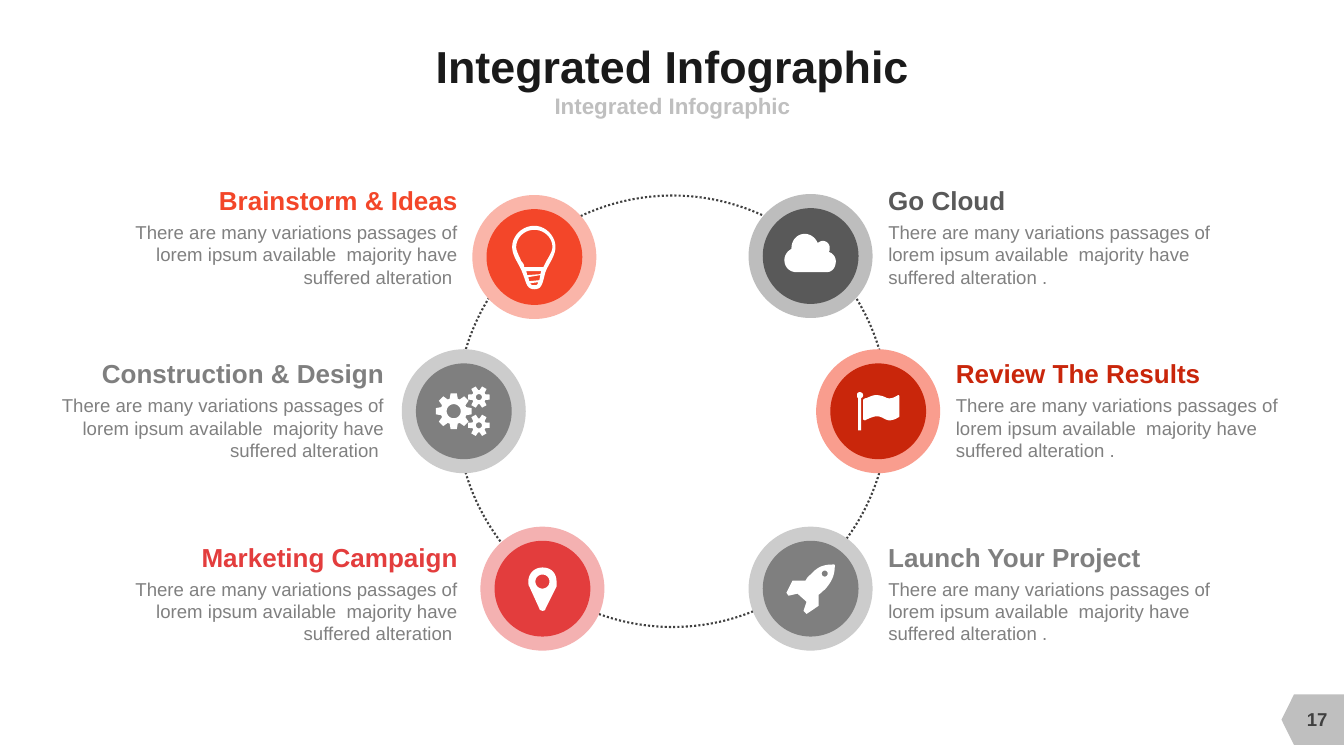
import math

import pptx
import pptx.dml.color
import pptx.enum.dml
import pptx.enum.shapes
import pptx.enum.text
import pptx.util

Inches = pptx.util.Inches
Pt = pptx.util.Pt
RGBColor = pptx.dml.color.RGBColor
Shape = pptx.enum.shapes.MSO_SHAPE
Align = pptx.enum.text.PP_ALIGN
Anchor = pptx.enum.text.MSO_ANCHOR

WHITE = RGBColor(0xFF, 0xFF, 0xFF)
BLACK = RGBColor(0x1A, 0x1A, 0x1A)
CHARCOAL = RGBColor(0x40, 0x40, 0x40)
DARK_GRAY = RGBColor(0x59, 0x59, 0x59)
GRAY = RGBColor(0x7F, 0x7F, 0x7F)
BODY_GRAY = RGBColor(0x80, 0x80, 0x80)
SILVER = RGBColor(0xBD, 0xBD, 0xBD)
TAG_GRAY = RGBColor(0xBF, 0xBF, 0xBF)
PALE_GRAY = RGBColor(0xCC, 0xCC, 0xCC)
ORANGE = RGBColor(0xF3, 0x46, 0x29)
PALE_ORANGE = RGBColor(0xFA, 0xB5, 0xA9)
RED = RGBColor(0xE3, 0x3D, 0x3D)
PALE_RED = RGBColor(0xF4, 0xB1, 0xB1)
DEEP_RED = RGBColor(0xC9, 0x26, 0x0B)
PALE_DEEP_RED = RGBColor(0xF9, 0x9D, 0x8E)

RING_SIZE, DISC_SIZE = 1.23, 0.95
BODY_WIDTH = 3.32
BODY_TEXT = ("There are many variations passages of lorem ipsum available  "
             "majority have suffered alteration ")

# heading, heading width, text edge, top, alignment, badge centre, ring colour, disc colour
TOPICS = [
    ("Construction & Design", 2.83, 3.81, 3.55, Align.RIGHT, (4.6, 4.08), PALE_GRAY, GRAY),
    ("Marketing Campaign", 2.57, 4.54, 5.37, Align.RIGHT, (5.38, 5.84), PALE_RED, RED),
    ("Go Cloud", 1.17, 8.81, 1.83, Align.LEFT, (8.04, 2.54), SILVER, DARK_GRAY),
    ("Review The Results", 2.45, 9.48, 3.55, Align.LEFT, (8.71, 4.08), PALE_DEEP_RED, DEEP_RED),
    ("Launch Your Project", 2.53, 8.81, 5.37, Align.LEFT, (8.04, 5.84), PALE_GRAY, GRAY),
    ("Brainstorm & Ideas", 2.4, 4.54, 1.83, Align.RIGHT, (5.3, 2.55), PALE_ORANGE, ORANGE),
]

# Outlines in inches: a pair is a straight step, six numbers are a Bézier curve.
BULB = [
    [(5.3, 2.24), (5.18, 2.24, 5.08, 2.34, 5.08, 2.45), (5.08, 2.54, 5.15, 2.62, 5.18, 2.7),
     (5.22, 2.8, 5.22, 2.87, 5.3, 2.87), (5.38, 2.87, 5.38, 2.81, 5.41, 2.7),
     (5.44, 2.62, 5.51, 2.54, 5.51, 2.45), (5.51, 2.34, 5.41, 2.24, 5.3, 2.24)],
    [(5.39, 2.65), (5.2, 2.65), (5.2, 2.63, 5.19, 2.61, 5.17, 2.59),
     (5.15, 2.54, 5.12, 2.49, 5.12, 2.45), (5.12, 2.36, 5.2, 2.28, 5.3, 2.28),
     (5.4, 2.28, 5.48, 2.36, 5.48, 2.45), (5.48, 2.49, 5.45, 2.54, 5.42, 2.59),
     (5.41, 2.61, 5.4, 2.63, 5.39, 2.65)],
    [(5.23, 2.73), (5.22, 2.69), (5.37, 2.69), (5.36, 2.72)],
    [(5.35, 2.78), (5.25, 2.79), (5.24, 2.75), (5.36, 2.73)],
    [(5.3, 2.83), (5.28, 2.83, 5.27, 2.83, 5.26, 2.81), (5.34, 2.8),
     (5.33, 2.83, 5.32, 2.83, 5.3, 2.83)],
]
MARKER = [(5.52, 5.82), (5.41, 6.04), (5.41, 6.05, 5.4, 6.06, 5.38, 6.06),
          (5.37, 6.06, 5.35, 6.05, 5.35, 6.04), (5.25, 5.82),
          (5.24, 5.81, 5.24, 5.78, 5.24, 5.77), (5.24, 5.69, 5.3, 5.63, 5.38, 5.63),
          (5.47, 5.63, 5.52, 5.69, 5.52, 5.77), (5.52, 5.78, 5.52, 5.81, 5.52, 5.82)]
ROCKET = [(8.18, 5.85), (8.16, 5.86, 8.15, 5.88, 8.12, 5.9), (8.12, 6.01), (8, 6.09),
          (7.97, 6.06), (8, 5.97), (7.91, 5.89), (7.82, 5.91), (7.8, 5.88), (7.86, 5.76),
          (7.99, 5.76), (8, 5.74, 8.02, 5.71, 8.04, 5.7), (8.11, 5.62, 8.17, 5.6, 8.27, 5.6),
          (8.28, 5.6, 8.28, 5.61, 8.28, 5.61), (8.28, 5.71, 8.25, 5.77, 8.18, 5.85)]
CLOUD = [(8.2, 2.7), (7.9, 2.7), (7.83, 2.7, 7.78, 2.65, 7.78, 2.58),
         (7.78, 2.53, 7.81, 2.49, 7.85, 2.47), (7.85, 2.46),
         (7.85, 2.38, 7.91, 2.32, 7.98, 2.32), (8.04, 2.32, 8.09, 2.36, 8.11, 2.41),
         (8.13, 2.4, 8.14, 2.39, 8.16, 2.39), (8.2, 2.39, 8.23, 2.42, 8.23, 2.46),
         (8.23, 2.47, 8.23, 2.49, 8.22, 2.5), (8.26, 2.51, 8.29, 2.55, 8.29, 2.59),
         (8.29, 2.66, 8.25, 2.7, 8.2, 2.7)]
FLAG = [
    [(8.54, 3.95), (8.54, 4.27), (8.51, 4.27), (8.51, 3.95),
     (8.5, 3.94, 8.5, 3.93, 8.5, 3.92), (8.5, 3.9, 8.51, 3.89, 8.53, 3.89),
     (8.54, 3.89, 8.56, 3.9, 8.56, 3.92), (8.56, 3.93, 8.56, 3.94, 8.54, 3.95)],
    [(8.92, 4.12), (8.92, 4.13, 8.92, 4.14, 8.91, 4.14), (8.88, 4.16, 8.85, 4.17, 8.82, 4.17),
     (8.78, 4.17, 8.75, 4.13, 8.7, 4.13), (8.66, 4.13, 8.62, 4.15, 8.58, 4.17),
     (8.57, 4.17, 8.56, 4.16, 8.56, 4.16), (8.56, 3.97), (8.56, 3.96, 8.58, 3.95, 8.59, 3.95),
     (8.62, 3.94, 8.65, 3.92, 8.69, 3.92), (8.73, 3.92, 8.76, 3.93, 8.8, 3.95),
     (8.86, 3.96, 8.9, 3.92, 8.91, 3.92), (8.92, 3.92, 8.92, 3.93, 8.92, 3.94)],
]


def polar(center, radius, angle):
    return center[0] + radius * math.cos(angle), center[1] + radius * math.sin(angle)


def circle(center, radius, steps=32):
    return [polar(center, radius, math.tau * step / steps) for step in range(steps)]


def gear(center, tip_radius, root_radius, hole_radius, teeth):
    """Return the toothed outline and the round hole of a gear."""
    pitch = math.tau / teeth
    profile = [(root_radius, -0.4), (tip_radius, -0.22), (tip_radius, 0.22), (root_radius, 0.4)]
    outline = [polar(center, radius, (tooth + offset) * pitch)
               for tooth in range(teeth) for radius, offset in profile]
    return [outline, circle(center, hole_radius)]


def flatten(outline, steps=10):
    """Turn straight and Bézier steps into a list of points in EMU."""
    points = [outline[0]]
    for step in outline[1:]:
        if len(step) == 2:
            points.append(step)
            continue
        controls = [points[-1], step[:2], step[2:4], step[4:]]
        for index in range(1, steps + 1):
            t = index / steps
            weights = [(1 - t) ** 3, 3 * t * (1 - t) ** 2, 3 * t * t * (1 - t), t ** 3]
            points.append(tuple(sum(w * control[axis] for w, control in zip(weights, controls))
                                for axis in (0, 1)))
    return [(Inches(x), Inches(y)) for x, y in points]


def paint(shape, color):
    shape.shadow.inherit = False
    shape.fill.solid()
    shape.fill.fore_color.rgb = color
    shape.line.fill.background()


def add_icon(slide, outlines):
    contours = [flatten(outline) for outline in outlines]
    builder = slide.shapes.build_freeform(*contours[0][0])
    for index, points in enumerate(contours):
        if index:
            builder.move_to(*points[0])
        builder.add_line_segments(points[1:], close=True)
    paint(builder.convert_to_shape(), WHITE)


def add_disc(slide, center, size, color):
    disc = slide.shapes.add_shape(Shape.OVAL, Inches(center[0] - size / 2),
                                  Inches(center[1] - size / 2), Inches(size), Inches(size))
    paint(disc, color)


def add_text(slide, box, text, size, color, align, bold=True, wrap=True,
             anchor=Anchor.TOP, line_spacing=None):
    frame = slide.shapes.add_textbox(*map(Inches, box)).text_frame
    frame.margin_left = frame.margin_right = frame.margin_top = frame.margin_bottom = 0
    frame.word_wrap = wrap
    frame.vertical_anchor = anchor
    paragraph = frame.paragraphs[0]
    paragraph.text = text
    paragraph.alignment = align
    paragraph.line_spacing = line_spacing
    font = paragraph.font
    font.name, font.size, font.bold = "Arial", Pt(size), bold
    font.color.rgb = color


def add_topic(slide, heading, heading_width, edge, top, align, center, ring_color, disc_color):
    add_disc(slide, center, RING_SIZE, ring_color)
    add_disc(slide, center, DISC_SIZE, disc_color)
    on_left = align == Align.RIGHT
    body = BODY_TEXT if on_left else BODY_TEXT + "."
    add_text(slide, (edge - BODY_WIDTH * on_left, top + 0.36, BODY_WIDTH, 0.67), body,
             13.3, BODY_GRAY, align, bold=False, line_spacing=Pt(16))
    add_text(slide, (edge - heading_width * on_left, top, heading_width, 0.31), heading,
             18.6, disc_color, align, wrap=False)


def add_page_number(slide):
    tag = slide.shapes.add_shape(Shape.FLOWCHART_OFFPAGE_CONNECTOR, Inches(12.77), Inches(6.83),
                                 Inches(0.5), Inches(0.62))
    tag.rotation = 90
    paint(tag, TAG_GRAY)
    add_text(slide, (12.73, 6.93, 0.67, 0.4), "17", 13.3, CHARCOAL, Align.CENTER,
             anchor=Anchor.MIDDLE)


def add_orbit(slide):
    orbit = slide.shapes.add_shape(Shape.OVAL, Inches(4.53), Inches(1.94),
                                   Inches(4.28), Inches(4.28))
    orbit.shadow.inherit = False
    orbit.fill.background()
    orbit.line.color.rgb = CHARCOAL
    orbit.line.width = Pt(1.5)
    orbit.line.dash_style = pptx.enum.dml.MSO_LINE.ROUND_DOT


def main():
    presentation = pptx.Presentation()
    presentation.slide_width, presentation.slide_height = Inches(13.33), Inches(7.5)
    slide = presentation.slides.add_slide(presentation.slide_layouts[6])
    add_page_number(slide)
    add_orbit(slide)
    add_text(slide, (2.56, 0.39, 8.22, 0.52), "Integrated Infographic", 32, BLACK,
             Align.CENTER, wrap=False, anchor=Anchor.MIDDLE)
    add_text(slide, (3.67, 0.9, 6, 0.29), "Integrated Infographic", 16, TAG_GRAY,
             Align.CENTER, anchor=Anchor.MIDDLE)
    for topic in TOPICS:
        add_topic(slide, *topic)
    gears = gear((4.5, 4.08), 0.18, 0.13, 0.07, 8)
    for center_y in (3.94, 4.22):
        gears += gear((4.75, center_y), 0.11, 0.07, 0.03, 6)
    marker = [MARKER, circle((5.38, 5.77), 0.07)]
    rocket = [ROCKET, circle((8.18, 5.69), 0.03)]
    for outlines in (BULB, marker, rocket, [CLOUD], FLAG, gears):
        add_icon(slide, outlines)
    presentation.save("out.pptx")


if __name__ == "__main__":
    main()
